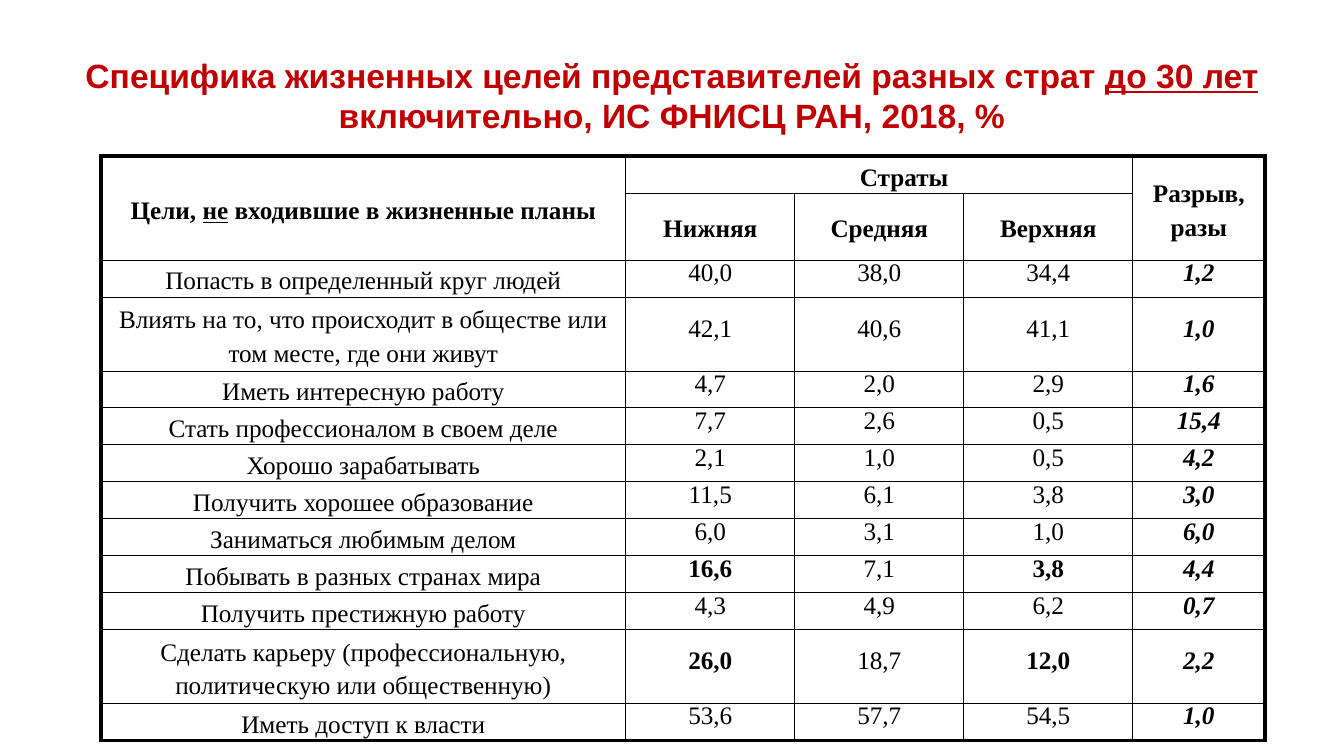
from lxml.etree import SubElement
from pptx import Presentation
from pptx.dml.color import RGBColor
from pptx.enum.text import MSO_ANCHOR, PP_ALIGN
from pptx.oxml.ns import qn
from pptx.util import Pt

BLACK = RGBColor(0x00, 0x00, 0x00)
RED = RGBColor(0xC0, 0x00, 0x00)

TITLE = [
    ("Специфика жизненных целей представителей разных страт ", "b"),
    ("до 30 лет ", "bu"),
    ("включительно, ИС ФНИСЦ РАН, 2018, %", "b"),
]
GOALS_HEADING = [("Цели, ", "b"), ("не", "bu"), (" входившие в жизненные планы", "b")]
STRATA = ["Нижняя", "Средняя", "Верхняя"]
GOALS = [
    ("Попасть в определенный круг людей", "40,0", "38,0", "34,4", "1,2"),
    ("Влиять на то, что происходит в обществе или том месте, где они живут",
     "42,1", "40,6", "41,1", "1,0"),
    ("Иметь интересную работу", "4,7", "2,0", "2,9", "1,6"),
    ("Стать профессионалом в своем деле", "7,7", "2,6", "0,5", "15,4"),
    ("Хорошо зарабатывать", "2,1", "1,0", "0,5", "4,2"),
    ("Получить хорошее образование", "11,5", "6,1", "3,8", "3,0"),
    ("Заниматься любимым делом", "6,0", "3,1", "1,0", "6,0"),
    ("Побывать в разных странах мира", "16,6", "7,1", "3,8", "4,4"),
    ("Получить престижную работу", "4,3", "4,9", "6,2", "0,7"),
    ("Сделать карьеру (профессиональную, политическую или общественную)",
     "26,0", "18,7", "12,0", "2,2"),
    ("Иметь доступ к власти", "53,6", "57,7", "54,5", "1,0"),
]
HIGHLIGHTED = {GOALS[7][0], GOALS[9][0]}
COLUMN_WIDTHS = [375, 120.75, 120.75, 120.75, 94.25]
ROW_HEIGHT = 26.4
TALL_ROWS = {3, 11}


class SlideBuilder:
    title_font = "Arial"
    table_font = "Times New Roman"
    title_size = 24
    table_size = 18
    thin = 0.75
    thick = 3

    def __init__(self, slide):
        self.slide = slide

    def add_spans(self, para, spans, font, size, color):
        para.alignment = PP_ALIGN.CENTER
        for text, marks in spans:
            span = para.add_run()
            span.text = text
            span.font.name = font
            span.font.size = Pt(size)
            span.font.color.rgb = color
            span.font.bold = "b" in marks
            span.font.italic = "i" in marks
            span.font.underline = "u" in marks

    def title(self, spans, left, top, width, height):
        box = self.slide.shapes.add_textbox(Pt(left), Pt(top), Pt(width), Pt(height))
        frame = box.text_frame
        frame.word_wrap = True
        frame.vertical_anchor = MSO_ANCHOR.BOTTOM
        self.add_spans(frame.paragraphs[0], spans, self.title_font, self.title_size, RED)

    def border(self, cell, edge, weight):
        line = SubElement(cell._tc.get_or_add_tcPr(), qn(f"a:ln{edge}"), w=str(Pt(weight)))
        fill = SubElement(line, qn("a:solidFill"))
        SubElement(fill, qn("a:srgbClr"), val=str(BLACK))

    def table(self, left, top, widths, heights):
        frame = self.slide.shapes.add_table(
            len(heights), len(widths), Pt(left), Pt(top), Pt(sum(widths)), Pt(sum(heights)))
        table = frame.table
        table.first_row = table.horz_banding = False
        for column, width in zip(table.columns, widths):
            column.width = Pt(width)
        for row, height in zip(table.rows, heights):
            row.height = Pt(height)
        last_row, last_column = len(heights) - 1, len(widths) - 1
        for r in range(len(heights)):
            for c in range(len(widths)):
                cell = table.cell(r, c)
                outer = {"L": c == 0, "R": c == last_column, "T": r == 0, "B": r == last_row}
                for edge, is_outer in outer.items():
                    self.border(cell, edge, self.thick if is_outer else self.thin)
                cell.fill.background()
        return table

    def cell(self, cell, spans, spacing=1.2, indent=0):
        cell.vertical_anchor = MSO_ANCHOR.MIDDLE
        cell.margin_left = cell.margin_right = Pt(5)
        cell.margin_top = cell.margin_bottom = 0
        para = cell.text_frame.paragraphs[0]
        para.line_spacing = spacing
        if indent:
            para._p.get_or_add_pPr().set("indent", str(Pt(indent)))
        self.add_spans(para, spans, self.table_font, self.table_size, BLACK)


def main():
    deck = Presentation()
    deck.slide_width, deck.slide_height = Pt(960), Pt(540)
    page = SlideBuilder(deck.slides.add_slide(deck.slide_layouts[6]))

    heights = [ROW_HEIGHT * (2 if row in TALL_ROWS else 1) for row in range(len(GOALS) + 2)]
    table = page.table(72, 111.6, COLUMN_WIDTHS, heights)
    table.cell(0, 0).merge(table.cell(1, 0))
    table.cell(0, 1).merge(table.cell(0, 3))
    table.cell(0, 4).merge(table.cell(1, 4))

    page.cell(table.cell(0, 0), GOALS_HEADING)
    page.cell(table.cell(0, 1), [("Страты", "b")], indent=35.4)
    page.cell(table.cell(0, 4), [("Разрыв, разы", "b")])
    for column, stratum in enumerate(STRATA, 1):
        page.cell(table.cell(1, column), [(stratum, "b")])

    for row, (goal, *shares, gap) in enumerate(GOALS, 2):
        page.cell(table.cell(row, 0), [(goal, "")])
        for column, share in enumerate(shares, 1):
            marks = "b" if goal in HIGHLIGHTED and column != 2 else ""
            page.cell(table.cell(row, column), [(share, marks)], Pt(12))
        page.cell(table.cell(row, 4), [(gap, "bi")], Pt(12))

    page.title(TITLE, 48, 31.7, 864, 68.4)
    deck.save("out.pptx")


if __name__ == "__main__":
    main()
